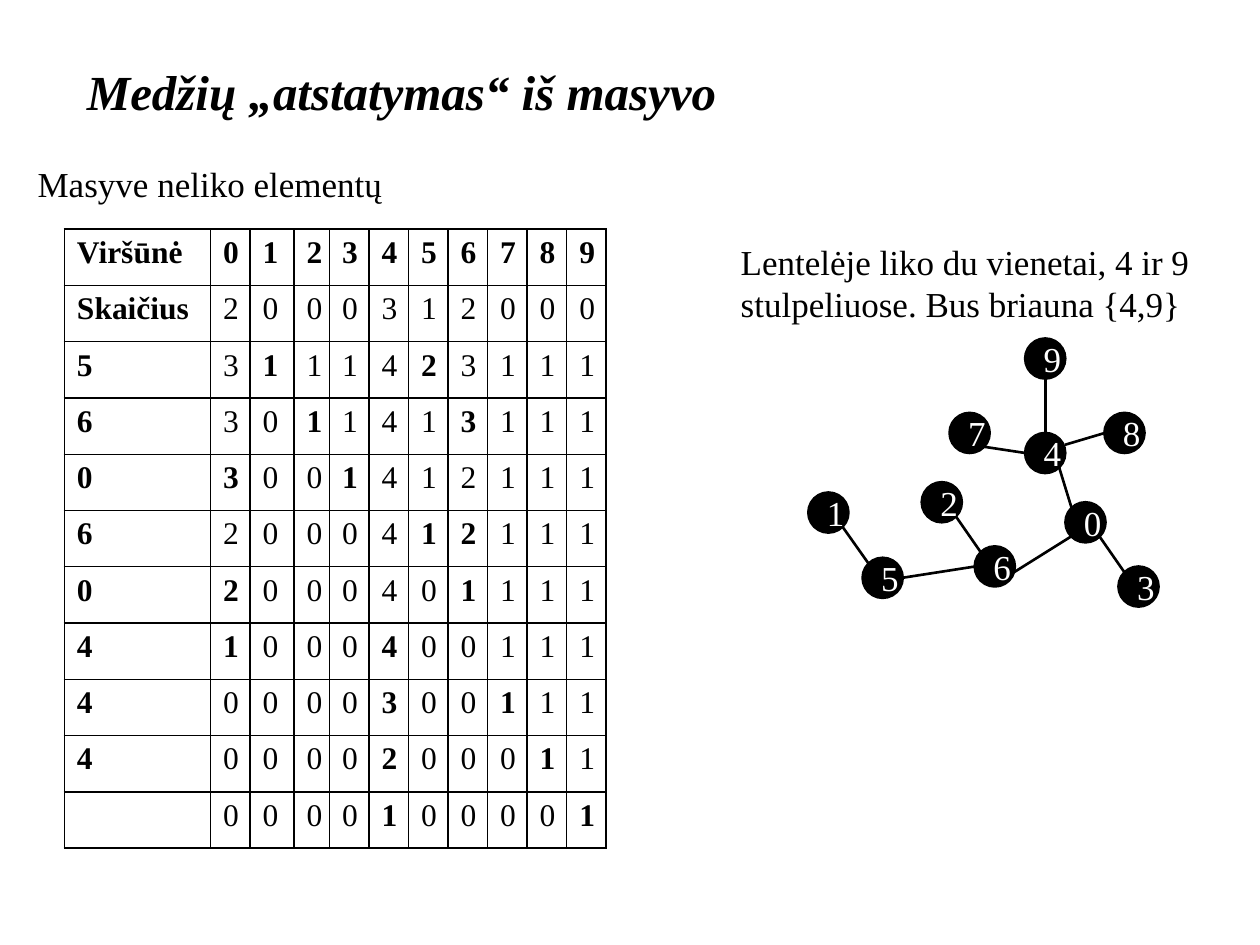
from lxml import etree
from pptx import Presentation
from pptx import util as u
from pptx.dml.color import RGBColor
from pptx.enum import shapes, text
from pptx.oxml import ns

HUES = {"ink": "000000", "paper": "FFFFFF"}

ROWS = [
    ("Viršūnė", "0123456789", "0123456789"),
    ("Skaičius", "2000312000", ""),
    ("5", "3111423111", "15"),
    ("6", "3011413111", "26"),
    ("0", "3001412111", "03"),
    ("6", "2000412111", "56"),
    ("0", "2000401111", "06"),
    ("4", "1000400111", "04"),
    ("4", "0000300111", "47"),
    ("4", "0000200011", "48"),
    ("", "0000100001", "49"),
]
WIDTHS = [83.5, 22.6, 25.2, 20.2] + [22.6] * 7
HIGH = 32.16

SIZE = 22.4
NODES = {
    "1": (462.2, 281.7), "5": (493.2, 319), "2": (527, 275.8),
    "6": (557.3, 312.5), "0": (609.1, 287.3), "3": (639.4, 324),
    "8": (631.4, 236.2), "4": (586.1, 247.7), "7": (542.9, 236.2),
    "9": (586.1, 193.7),
}
NEAR, FAR = 0.15, 0.85
TOP, LEFT, BASE, RIGHT = (0.5, 0), (0, 0.5), (0.5, 1), (1, 0.5)
HEAD, TAIL, SIDE = (NEAR, NEAR), (FAR, FAR), (NEAR, FAR)
EDGES = [
    ("1", TAIL, "5", HEAD), ("2", TAIL, "6", HEAD), ("0", TAIL, "3", HEAD),
    ("5", RIGHT, "6", LEFT), ("0", SIDE, "6", (1, 0.64)),
    ("4", TAIL, "0", HEAD), ("7", TAIL, "4", LEFT),
    ("4", (1, 0.29), "8", LEFT), ("9", BASE, "4", TOP),
]


def hue(name):
    return RGBColor.from_string(HUES[name])


def put(frame, words, font="Times New Roman", size=20, tint="ink",
        bold=False, slant=False, align=None):
    para = frame.paragraphs[0]
    para.alignment = align
    run = para.add_run()
    run.text = words
    face = run.font
    face.name, face.size = font, u.Pt(size)
    face.bold, face.italic = bold, slant
    face.color.rgb = hue(tint)


class Pen:
    def __init__(self, slide, thin=1.5, thick=2, rule=1):
        self.slide = slide
        self.thin, self.thick, self.rule = thin, thick, rule

    def label(self, x, y, w, h, words, **form):
        box = self.slide.shapes.add_textbox(*map(u.Pt, (x, y, w, h)))
        frame = box.text_frame
        frame.word_wrap = True
        frame.auto_size = text.MSO_AUTO_SIZE.SHAPE_TO_FIT_TEXT
        put(frame, words, **form)

    def node(self, x, y, words):
        dot = self.slide.shapes.add_shape(
            shapes.MSO_SHAPE.OVAL, *map(u.Pt, (x, y, SIZE, SIZE)))
        dot.shadow.inherit = False
        dot.fill.solid()
        dot.fill.fore_color.rgb = hue("ink")
        dot.line.color.rgb = hue("ink")
        dot.line.width = u.Pt(self.thick)
        dot.text_frame.vertical_anchor = text.MSO_ANCHOR.MIDDLE
        put(dot.text_frame, words, tint="paper", align=text.PP_ALIGN.CENTER)

    def edge(self, start, end):
        line = self.slide.shapes.add_connector(
            shapes.MSO_CONNECTOR.STRAIGHT, *map(u.Pt, start + end))
        line.line.color.rgb = hue("ink")
        line.line.width = u.Pt(self.thin)
        etree.SubElement(line._element.spPr, ns.qn("a:effectLst"))

    def frame(self, cell):
        props = cell._tc.get_or_add_tcPr()
        for side in ("lnL", "lnR", "lnT", "lnB"):
            line = etree.SubElement(props, ns.qn("a:" + side),
                                    w=str(u.Pt(self.rule)))
            fill = etree.SubElement(line, ns.qn("a:solidFill"))
            etree.SubElement(fill, ns.qn("a:srgbClr"), val=HUES["ink"])
        cell.fill.background()

    def grid(self, x, y, rows, widths, high):
        table = self.slide.shapes.add_table(
            len(rows), len(widths),
            *map(u.Pt, (x, y, sum(widths), high * len(rows)))).table
        table.first_row = table.horz_banding = False
        for col, wide in zip(table.columns, widths):
            col.width = u.Pt(wide)
        for row, (name, counts, marks) in zip(table.rows, rows):
            row.height = u.Pt(high)
            for i, (cell, words) in enumerate(zip(row.cells, [name, *counts])):
                self.frame(cell)
                if words:
                    bold = i == 0 or str(i - 1) in marks
                    put(cell.text_frame, words, size=18, bold=bold)


def spot(name, part):
    return tuple(p + SIZE * f for p, f in zip(NODES[name], part))


def main():
    deck = Presentation()
    deck.slide_width, deck.slide_height = u.Pt(720), u.Pt(540)
    pen = Pen(deck.slides.add_slide(deck.slide_layouts[6]))
    pen.label(42.5, 31.7, 658, 41, "Medžių „atstatymas“ iš masyvo",
              size=28, bold=True, slant=True)
    pen.label(14.4, 89.3, 368.6, 31.7, "Masyve neliko elementų")
    pen.grid(36.8, 131, ROWS, WIDTHS, HIGH)
    pen.label(416.2, 133.9, 304.5, 55.4,
              "Lentelėje liko du vienetai, 4 ir 9 stulpeliuose. "
              "Bus briauna {4,9}")
    for name, (x, y) in NODES.items():
        pen.node(x, y, name)
    for start, out, end, into in EDGES:
        pen.edge(spot(start, out), spot(end, into))
    deck.save("out.pptx")


if __name__ == "__main__":
    main()
